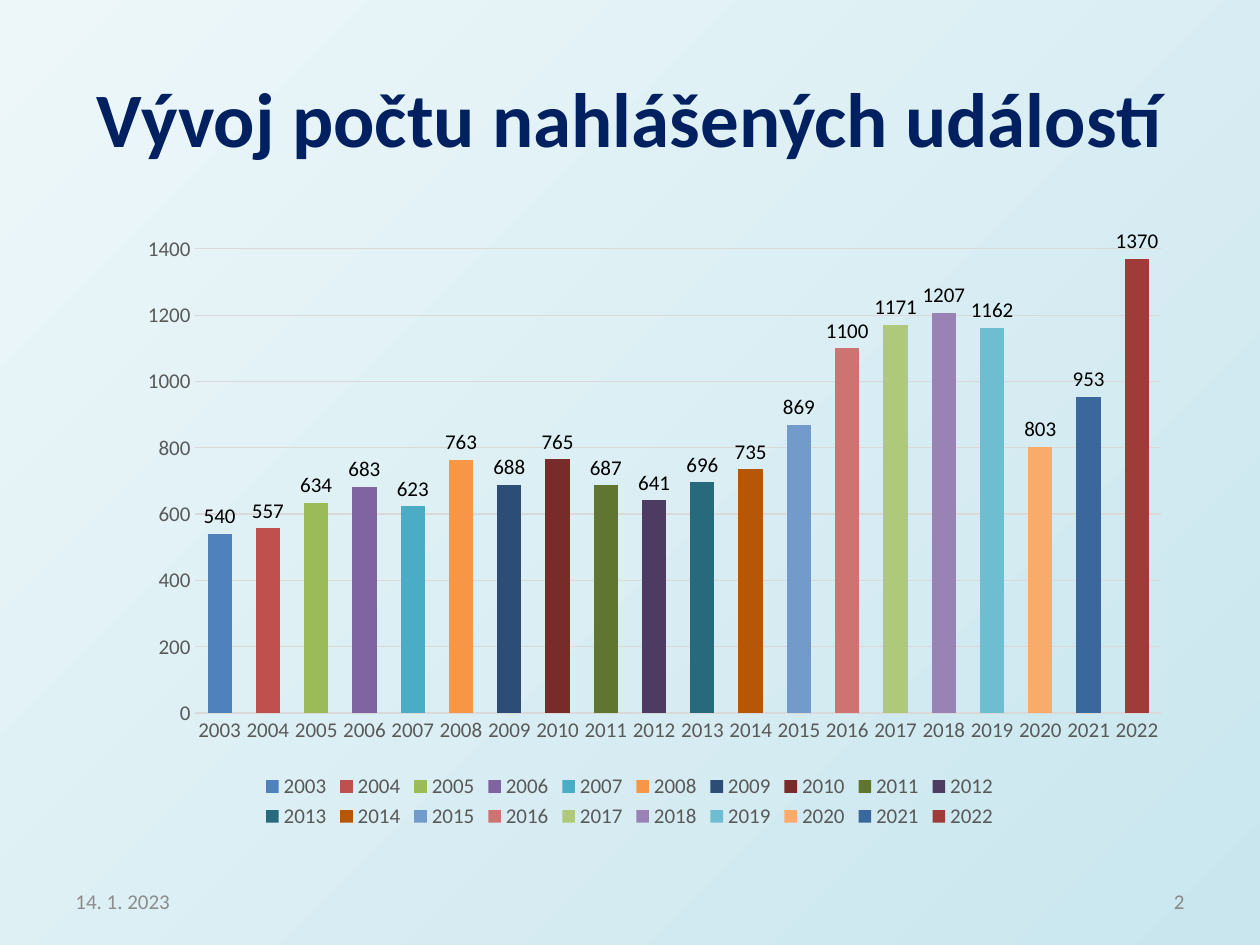
from dataclasses import dataclass

from lxml.etree import SubElement
from pptx import Presentation
from pptx.chart.data import CategoryChartData
from pptx.dml.color import RGBColor
from pptx.enum.chart import XL_CHART_TYPE, XL_LABEL_POSITION, XL_LEGEND_POSITION, XL_TICK_MARK
from pptx.enum.text import MSO_ANCHOR, PP_ALIGN
from pptx.oxml.ns import qn
from pptx.util import Emu, Pt

PX_PER_INCH = 126
FIRST_YEAR = 2003
EVENT_COUNTS = [540, 557, 634, 683, 623, 763, 688, 765, 687, 641,
                696, 735, 869, 1100, 1171, 1207, 1162, 803, 953, 1370]
PLOT_AREA = {"x": 0.1, "y": 0.08, "w": 0.89, "h": 0.73}


@dataclass(frozen=True)
class Theme:
    """Colours, font and type sizes of the slide."""

    font: str = "Calibri"
    title_size: int = 44
    small_size: int = 12
    title: str = "002060"
    date: str = "8C8C8C"
    number: str = "898989"
    label: str = "000000"
    axis: str = "595959"
    grid: str = "D9D9D9"
    background: tuple = ("EDF7F9", "C9E6EE")
    bars: tuple = (
        "4F81BD", "C0504D", "9BBB59", "8064A2", "4BACC6",
        "F79646", "2C4D75", "772C2A", "5F7530", "4D3B62",
        "276A7C", "B65708", "729ACA", "CD7371", "AFC97A",
        "9983B5", "6FBDD1", "F9AB6B", "3A679C", "9F3B38",
    )


THEME = Theme()


def px(length):
    """Turn pixels into EMU."""
    return Emu(round(length * 914400 / PX_PER_INCH))


def style_font(font, size, color, bold=False):
    """Set the face, size, weight and colour of a font."""
    font.name = THEME.font
    font.size = Pt(size)
    font.bold = bold
    font.color.rgb = RGBColor.from_string(color)


def style_line(line, color):
    """Give a line its colour and the thin chart width."""
    line.color.rgb = RGBColor.from_string(color)
    line.width = Pt(0.75)


def fill_background(slide):
    """Fill the slide with a diagonal gradient."""
    fill = slide.background.fill
    fill.gradient()
    fill.gradient_angle = 315
    for stop, color, position in zip(fill.gradient_stops, THEME.background, (0, 1)):
        stop.color.rgb = RGBColor.from_string(color)
        stop.position = position


def write_text(shape, text, size, color, alignment, bold=False):
    """Write one vertically centred line into a shape."""
    frame = shape.text_frame
    frame.word_wrap = True
    frame.vertical_anchor = MSO_ANCHOR.MIDDLE
    paragraph = frame.paragraphs[0]
    paragraph.alignment = alignment
    run = paragraph.add_run()
    run.text = text
    style_font(run.font, size, color, bold)


def add_title(slide, text):
    """Place and fill the title placeholder."""
    title = slide.shapes.title
    title.left, title.top, title.width, title.height = map(px, (63, 38, 1134, 157))
    write_text(title, text, THEME.title_size, THEME.title, PP_ALIGN.CENTER, True)


def add_footer(slide, left, text, color, alignment):
    """Add a small text at the foot of the slide."""
    box = slide.shapes.add_textbox(px(left), px(876), px(294), px(50))
    write_text(box, text, THEME.small_size, color, alignment)


def set_plot_layout(chart):
    """Fix the inner plot area as fractions of the chart."""
    plot_area = chart.plots[0]._element.getparent()
    layout = plot_area.find(qn("c:layout"))
    if layout is None:
        layout = SubElement(plot_area, qn("c:layout"))
        plot_area.insert(0, layout)
    manual = SubElement(layout, qn("c:manualLayout"))
    settings = {"layoutTarget": "inner", "xMode": "edge", "yMode": "edge", **PLOT_AREA}
    for name, value in settings.items():
        SubElement(manual, qn(f"c:{name}")).set("val", str(value))


def style_axes(chart):
    """Format both axes and the gridlines."""
    for axis in (chart.category_axis, chart.value_axis):
        axis.major_tick_mark = XL_TICK_MARK.NONE
        axis.minor_tick_mark = XL_TICK_MARK.NONE
        style_font(axis.tick_labels.font, THEME.small_size, THEME.axis)
    style_line(chart.category_axis.format.line, THEME.grid)
    values = chart.value_axis
    values.minimum_scale, values.maximum_scale, values.major_unit = 0, 1400, 200
    values.format.line.fill.background()
    style_line(values.major_gridlines.format.line, THEME.grid)


def style_bars(plot):
    """Colour each bar and show its value above it."""
    plot.vary_by_categories = True
    plot.gap_width = 99
    plot.overlap = -13
    series = plot.series[0]
    for index, color in enumerate(THEME.bars):
        fill = series.points[index].format.fill
        fill.solid()
        fill.fore_color.rgb = RGBColor.from_string(color)
    labels = series.data_labels
    labels.show_value = True
    labels.position = XL_LABEL_POSITION.OUTSIDE_END
    style_font(labels.font, THEME.small_size, THEME.label)


def add_event_chart(slide):
    """Add the column chart of yearly event counts."""
    data = CategoryChartData()
    data.categories = [str(FIRST_YEAR + offset) for offset in range(len(EVENT_COUNTS))]
    data.add_series("Series 1", EVENT_COUNTS)
    chart = slide.shapes.add_chart(
        XL_CHART_TYPE.COLUMN_CLUSTERED, px(87), px(198), px(1085), px(636), data
    ).chart
    chart.has_title = False
    style_font(chart.font, 10, THEME.label)
    style_axes(chart)
    style_bars(chart.plots[0])
    chart.has_legend = True
    chart.legend.position = XL_LEGEND_POSITION.BOTTOM
    chart.legend.include_in_layout = False
    style_font(chart.legend.font, THEME.small_size, THEME.axis)
    set_plot_layout(chart)


def main():
    """Build the slide and save it."""
    presentation = Presentation()
    presentation.slide_width, presentation.slide_height = px(1260), px(945)
    slide = presentation.slides.add_slide(presentation.slide_layouts[5])
    fill_background(slide)
    add_title(slide, "Vývoj počtu nahlášených událostí")
    add_footer(slide, 63, "14. 1. 2023", THEME.date, PP_ALIGN.LEFT)
    add_footer(slide, 903, "2", THEME.number, PP_ALIGN.RIGHT)
    add_event_chart(slide)
    presentation.save("out.pptx")


if __name__ == "__main__":
    main()
